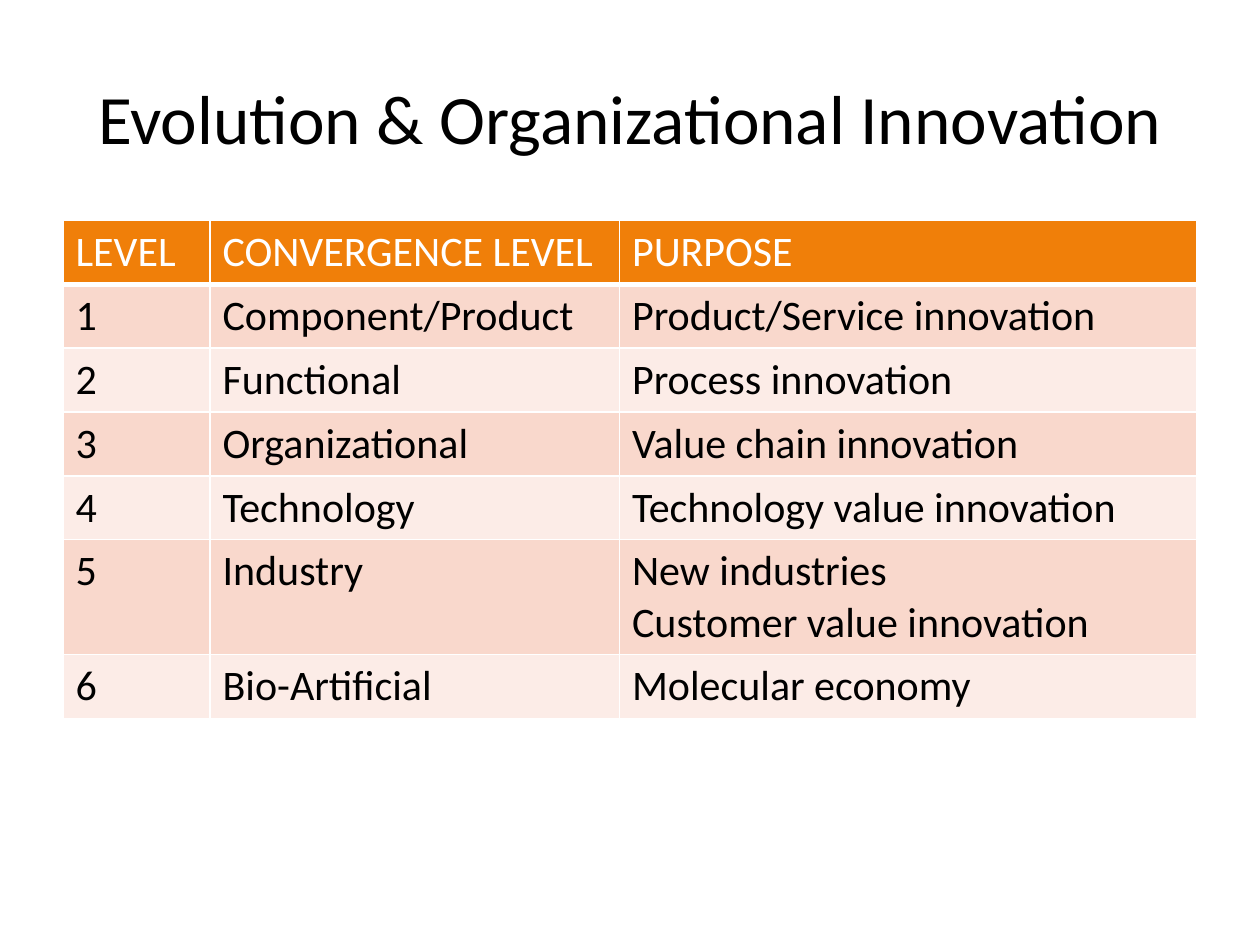
from lxml.etree import SubElement
from pptx import Presentation
from pptx.dml.color import RGBColor
from pptx.enum.text import MSO_ANCHOR, PP_ALIGN
from pptx.oxml.ns import qn
from pptx.util import Pt

FONT = "Calibri"
BLACK = RGBColor(0x00, 0x00, 0x00)
WHITE = RGBColor(0xFF, 0xFF, 0xFF)
ORANGE = RGBColor(0xF0, 0x7F, 0x09)
BANDS = [RGBColor(0xF9, 0xD8, 0xCC), RGBColor(0xFC, 0xEC, 0xE7)]

TITLE = "Evolution & Organizational Innovation"
COLUMN_WIDTHS = [84, 234, 330]
LINE_HEIGHT = 29.25
CELL_PADDING = 7.25
ROWS = [
    ["LEVEL", "CONVERGENCE LEVEL", "PURPOSE"],
    ["1", "Component/Product", "Product/Service innovation"],
    ["2", "Functional", "Process innovation"],
    ["3", "Organizational", "Value chain innovation"],
    ["4", "Technology", "Technology value innovation"],
    ["5", "Industry", "New industries\nCustomer value innovation"],
    ["6", "Bio-Artificial", "Molecular economy"],
]


def write_text(frame, text, size, color=BLACK, align=PP_ALIGN.LEFT, anchor=MSO_ANCHOR.TOP):
    """Write one paragraph for each line of text."""
    frame.word_wrap = True
    frame.vertical_anchor = anchor
    for index, line in enumerate(text.split("\n")):
        para = frame.paragraphs[0] if index == 0 else frame.add_paragraph()
        para.alignment = align
        span = para.add_run()
        span.text = line
        span.font.name = FONT
        span.font.size = Pt(size)
        span.font.bold = False
        span.font.color.rgb = color


def set_borders(cell, bottom_width):
    """Draw white borders; call before the cell is filled."""
    properties = cell._tc.get_or_add_tcPr()
    for side, width in (("L", 1), ("R", 1), ("T", 1), ("B", bottom_width)):
        line = SubElement(properties, qn(f"a:ln{side}"), w=str(Pt(width)))
        fill = SubElement(line, qn("a:solidFill"))
        SubElement(fill, qn("a:srgbClr"), val=str(WHITE))


def add_title(page, left, top, width, height):
    box = page.shapes.add_textbox(Pt(left), Pt(top), Pt(width), Pt(height))
    write_text(box.text_frame, TITLE, size=39.6,
               align=PP_ALIGN.CENTER, anchor=MSO_ANCHOR.MIDDLE)


def add_level_table(page, left, top, width):
    heights = [max(text.count("\n") + 1 for text in row) * LINE_HEIGHT + CELL_PADDING
               for row in ROWS]
    table = page.shapes.add_table(len(ROWS), len(COLUMN_WIDTHS), Pt(left), Pt(top),
                                  Pt(width), Pt(sum(heights))).table
    for column, share in zip(table.columns, COLUMN_WIDTHS):
        column.width = Pt(width * share / sum(COLUMN_WIDTHS))

    for number, (row, texts) in enumerate(zip(table.rows, ROWS)):
        row.height = Pt(heights[number])
        is_header = number == 0
        for cell, text in zip(row.cells, texts):
            set_borders(cell, bottom_width=3 if is_header else 1)
            cell.fill.solid()
            cell.fill.fore_color.rgb = ORANGE if is_header else BANDS[(number - 1) % 2]
            write_text(cell.text_frame, text, size=24, color=WHITE if is_header else BLACK)


def main():
    deck = Presentation()
    deck.slide_width, deck.slide_height = Pt(720), Pt(540)
    page = deck.slides.add_slide(deck.slide_layouts[6])
    add_title(page, left=36, top=21.6, width=648, height=90)
    add_level_table(page, left=36, top=126, width=648)
    deck.save("out.pptx")


if __name__ == "__main__":
    main()
